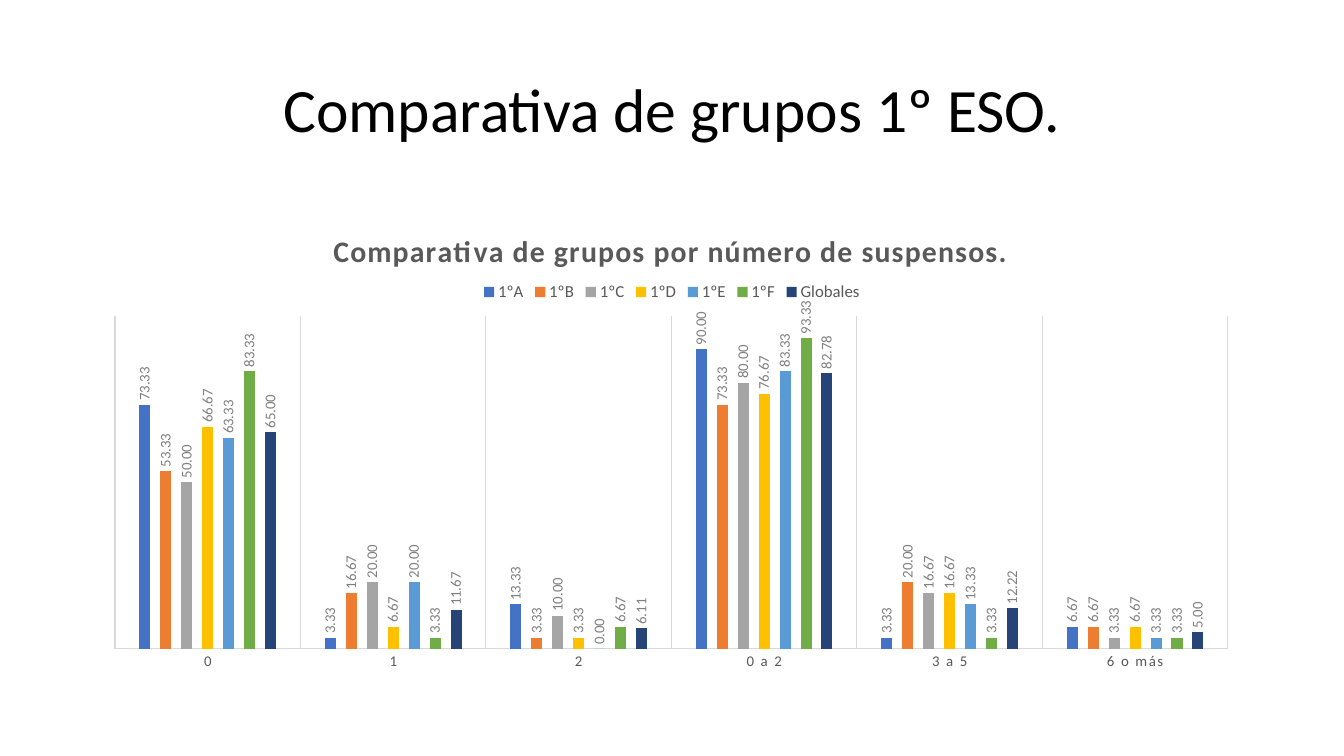
from dataclasses import dataclass
from lxml.etree import SubElement as Sub
from pptx import Presentation
from pptx.chart.data import CategoryChartData as Data
from pptx.dml.color import RGBColor as RGB
from pptx.enum.chart import (XL_CHART_TYPE as Kind, XL_LABEL_POSITION as Spot,
                             XL_LEGEND_POSITION as Side, XL_TICK_MARK as Tick)
from pptx.enum.text import MSO_ANCHOR as Anchor, PP_ALIGN as Align
from pptx.oxml.ns import qn
from pptx.util import Pt

SCALE = 914400 / 100.8  # EMU per px


@dataclass(frozen=True)
class Theme:
    face: str = "Calibri"
    ink: str = "000000"
    gray: str = "595959"
    pale: str = "808080"
    rule: str = "D9D9D9"
    head: float = 44
    title: float = 21.3
    key: float = 12
    small: float = 10.6


T = Theme()
CATS = ["0", "1", "2", "0 a 2", "3 a 5", "6 o más"]
GROUPS = [
    ("1ºA", "4472C4", [73.33, 3.33, 13.33, 90, 3.33, 6.67]),
    ("1ºB", "ED7D31", [53.33, 16.67, 3.33, 73.33, 20, 6.67]),
    ("1ºC", "A5A5A5", [50, 20, 10, 80, 16.67, 3.33]),
    ("1ºD", "FFC000", [66.67, 6.67, 3.33, 76.67, 16.67, 6.67]),
    ("1ºE", "5B9BD5", [63.33, 20, 0, 83.33, 13.33, 3.33]),
    ("1ºF", "70AD47", [83.33, 3.33, 6.67, 93.33, 3.33, 3.33]),
    ("Globales", "264478", [65, 11.67, 6.11, 82.78, 12.22, 5]),
]


def px(n):
    return round(n * SCALE)


def style(font, size, color, bold=False):
    font.name, font.size, font.bold = T.face, Pt(size), bold
    font.color.rgb = RGB.from_string(color)


def write(frame, text, size=T.small, color=T.ink, bold=False, space=None):
    para = frame.paragraphs[0]
    para.alignment = Align.CENTER
    if space:
        para.line_spacing = space
    run = para.add_run()
    run.text = text
    style(run.font, size, color, bold)


def rule(line):
    line.color.rgb = RGB.from_string(T.rule)
    line.width = Pt(0.75)


def place(node, index, box, part, sized=True):
    """Fix a chart part at px offsets inside the chart box."""
    for old in node.findall(qn("c:layout")):
        node.remove(old)
    layout = node.makeelement(qn("c:layout"))
    node.insert(index, layout)
    manual = Sub(layout, qn("c:manualLayout"))
    if part == "plot":
        Sub(manual, qn("c:layoutTarget")).set("val", "inner")
    for name in ("xMode", "yMode"):
        Sub(manual, qn("c:" + name)).set("val", "edge")
    names = "xywh" if sized else "xy"
    for name, n, full in zip(names, box[1], box[0][2:] * 2):
        Sub(manual, qn("c:" + name)).set("val", f"{n / full:.4f}")


def heading(slide, box):
    shape = slide.shapes.add_textbox(*map(px, box))
    frame = shape.text_frame
    frame.word_wrap = True
    frame.vertical_anchor = Anchor.MIDDLE
    write(frame, "Comparativa de grupos 1º ESO.", size=T.head, space=0.9)


def bars(slide, box):
    data = Data(number_format="0.00")
    data.categories = CATS
    for name, _, vals in GROUPS:
        data.add_series(name, vals)
    chart = slide.shapes.add_chart(
        Kind.COLUMN_CLUSTERED, *map(px, box), data).chart
    style(chart.font, 10, T.ink)

    # Title and legend
    chart.has_title = True
    write(chart.chart_title.text_frame,
          "Comparativa de grupos por número de suspensos.",
          size=T.title, color=T.gray, bold=True)
    chart.has_legend = True
    key = chart.legend
    key.position = Side.TOP
    key.include_in_layout = False
    style(key.font, T.key, T.gray)

    # Axes
    cat, val = chart.category_axis, chart.value_axis
    cat.major_tick_mark = cat.minor_tick_mark = Tick.NONE
    cat.has_major_gridlines = True
    rule(cat.major_gridlines.format.line)
    rule(cat.format.line)
    style(cat.tick_labels.font, T.small, T.gray)
    val.minimum_scale, val.maximum_scale = 0, 100
    val.has_major_gridlines = False
    val.tick_labels.number_format = "0.00"
    val.tick_labels.number_format_is_linked = False
    val.visible = False

    # Columns and their upright values
    plot = chart.plots[0]
    plot.gap_width, plot.overlap = 444, -90
    plot.vary_by_categories = False
    for row, (_, color, _) in zip(plot.series, GROUPS):
        row.format.fill.solid()
        row.format.fill.fore_color.rgb = RGB.from_string(color)
        row.invert_if_negative = False
        tags = row.data_labels
        tags.show_value = True
        tags.position = Spot.OUTSIDE_END
        tags.number_format = "0.00"
        tags.number_format_is_linked = False
        style(tags.font, T.small, T.pale)

    # Label turn, letter spacing and inner layout
    root = chart.element
    for tags in root.iter(qn("c:dLbls")):
        for body in tags.iter(qn("a:bodyPr")):
            body.set("rot", "-5400000")
            body.set("vert", "horz")
    area = next(root.iter(qn("c:plotArea")))
    title = next(root.iter(qn("c:title")))
    for run in title.iter(qn("a:rPr")):
        run.set("spc", "100")
    for run in next(root.iter(qn("c:catAx"))).iter(qn("a:defRPr")):
        run.set("spc", "120")
    place(area, 0, (box, (22, 114, 1113, 333)), "plot")
    place(title, 1, (box, (235, 23)), "title", sized=False)
    place(next(root.iter(qn("c:legend"))), 1,
          (box, (385, 77, 388, 26)), "legend")


def main():
    deck = Presentation()
    deck.slide_width, deck.slide_height = px(1344), px(756)
    slide = deck.slides.add_slide(deck.slide_layouts[6])
    heading(slide, (93, 40, 1159, 146))
    bars(slide, (93, 202, 1159, 480))
    deck.save("out.pptx")


if __name__ == "__main__":
    main()
